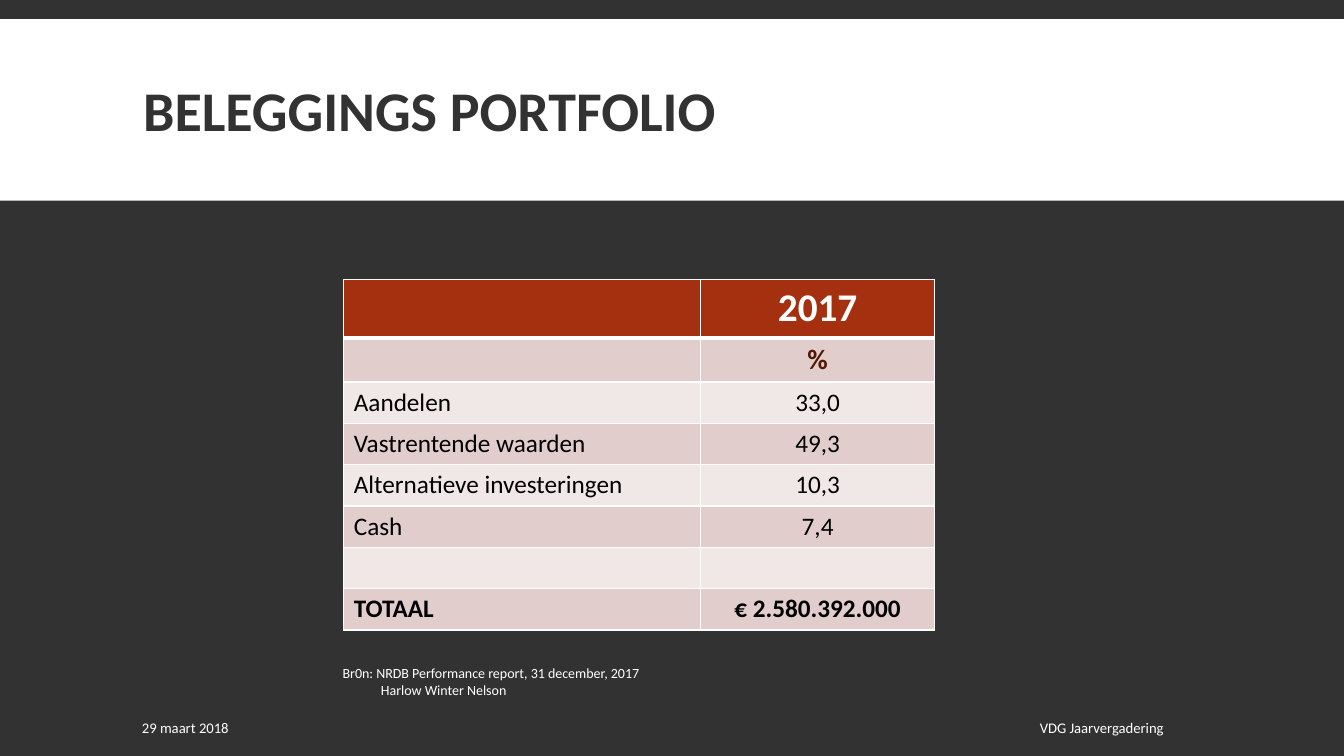
from dataclasses import dataclass

from lxml.etree import SubElement
from pptx import Presentation
from pptx.dml.color import RGBColor
from pptx.enum.shapes import MSO_SHAPE
from pptx.enum.text import MSO_ANCHOR, MSO_AUTO_SIZE, PP_ALIGN
from pptx.oxml.ns import qn
from pptx.util import Inches, Pt

COLORS = {
    "dark": "323232",
    "white": "FFFFFF",
    "header": "A5300F",
    "band": "E1CDCC",
    "light": "F0E8E7",
    "percent": "521808",
    "black": "000000",
}
FONT = "Calibri"


@dataclass
class Row:
    label: str
    value: str
    height: float = 0.41
    size: float = 18
    color: str = "black"
    bold: bool = False


@dataclass
class Note:
    lines: list[str]
    left: float
    top: float
    width: float
    height: float
    size: float = 10.5
    align: PP_ALIGN = PP_ALIGN.LEFT
    anchor: MSO_ANCHOR = MSO_ANCHOR.MIDDLE
    hanging: float = 0


ROWS = [
    Row("", "2017", 0.58, 28, "white", True),
    Row("", "%", 0.44, 20, "percent", True),
    Row("Aandelen", "33,0"),
    Row("Vastrentende waarden", "49,3"),
    Row("Alternatieve investeringen", "10,3"),
    Row("Cash", "7,4"),
    Row("", ""),
    Row("TOTAAL", "€ 2.580.392.000", bold=True),
]
NOTES = [
    Note(["VDG Jaarvergadering"], 6.12, 7.02, 5.52, 0.4, align=PP_ALIGN.RIGHT),
    Note(["29 maart 2018"], 1.31, 7.02, 3.28, 0.4),
    Note(
        ["Br0n: NRDB Performance report, 31 december, 2017", "Harlow Winter Nelson"],
        3.3, 6.54, 3.4, 0.44, size=10, anchor=MSO_ANCHOR.TOP, hanging=0.38,
    ),
]


def rgb(name: str) -> RGBColor:
    return RGBColor.from_string(COLORS[name])


def write(p, text: str, *, size: float, color: str, bold: bool = False,
          align: PP_ALIGN = PP_ALIGN.LEFT) -> None:
    p.alignment = align
    font = p.font
    if text:
        r = p.add_run()
        r.text = text
        font = r.font
    font.name = FONT
    font.size = Pt(size)
    font.bold = bold
    font.color.rgb = rgb(color)


def set_borders(cell, top: float, bottom: float) -> None:
    tcPr = cell._tc.get_or_add_tcPr()
    for side, width in (("L", 1), ("R", 1), ("T", top), ("B", bottom)):
        ln = SubElement(tcPr, qn(f"a:ln{side}"), w=str(Pt(width)))
        fill = SubElement(ln, qn("a:solidFill"))
        SubElement(fill, qn("a:srgbClr"), val=COLORS["white"])


def add_title(s, text: str) -> None:
    title = s.shapes.title
    title.left, title.top = Inches(1.32), Inches(0.31)
    title.width, title.height = Inches(10.7), Inches(1.65)
    tf = title.text_frame
    tf.auto_size = MSO_AUTO_SIZE.NONE
    tf.vertical_anchor = MSO_ANCHOR.MIDDLE
    p = tf.paragraphs[0]
    p.line_spacing = 0.85
    write(p, text, size=40, color="dark", bold=True)


def add_band(s, width: int) -> None:
    sp = s.shapes.add_shape(MSO_SHAPE.RECTANGLE, 0, Inches(0.19), width, Inches(1.8))
    sp.shadow.inherit = False
    sp.fill.solid()
    sp.fill.fore_color.rgb = rgb("white")
    sp.line.fill.background()
    s.shapes.title._element.addprevious(sp._element)


def add_portfolio(s, rows: list[Row]) -> None:
    height = sum(row.height for row in rows)
    table = s.shapes.add_table(len(rows), 2, Inches(3.41), Inches(2.77),
                               Inches(5.86), Inches(height)).table
    for column, width in zip(table.columns, (3.54, 2.32)):
        column.width = Inches(width)
    for i, row in enumerate(rows):
        table.rows[i].height = Inches(row.height)
        fill = "header" if i == 0 else "band" if i % 2 else "light"
        cells = ((row.label, PP_ALIGN.LEFT), (row.value, PP_ALIGN.CENTER))
        for j, (text, align) in enumerate(cells):
            cell = table.cell(i, j)
            set_borders(cell, top=3 if i == 1 else 1, bottom=3 if i == 0 else 1)
            cell.fill.solid()
            cell.fill.fore_color.rgb = rgb(fill)
            write(cell.text_frame.paragraphs[0], text, size=row.size,
                  color=row.color, bold=row.bold, align=align)


def add_note(s, note: Note) -> None:
    sp = s.shapes.add_textbox(Inches(note.left), Inches(note.top),
                              Inches(note.width), Inches(note.height))
    tf = sp.text_frame
    tf.word_wrap = True
    tf.vertical_anchor = note.anchor
    for i, line in enumerate(note.lines):
        p = tf.add_paragraph() if i else tf.paragraphs[0]
        if i:
            p._p.get_or_add_pPr().set("marL", str(Inches(note.hanging)))
        write(p, line, size=note.size, color="white", align=note.align)


def main() -> None:
    prs = Presentation()
    prs.slide_width, prs.slide_height = Inches(13.33), Inches(7.5)
    s = prs.slides.add_slide(prs.slide_layouts[5])
    s.background.fill.solid()
    s.background.fill.fore_color.rgb = rgb("dark")
    add_band(s, prs.slide_width)
    add_title(s, "BELEGGINGS PORTFOLIO")
    add_portfolio(s, ROWS)
    for note in NOTES:
        add_note(s, note)
    prs.save("out.pptx")


if __name__ == "__main__":
    main()
